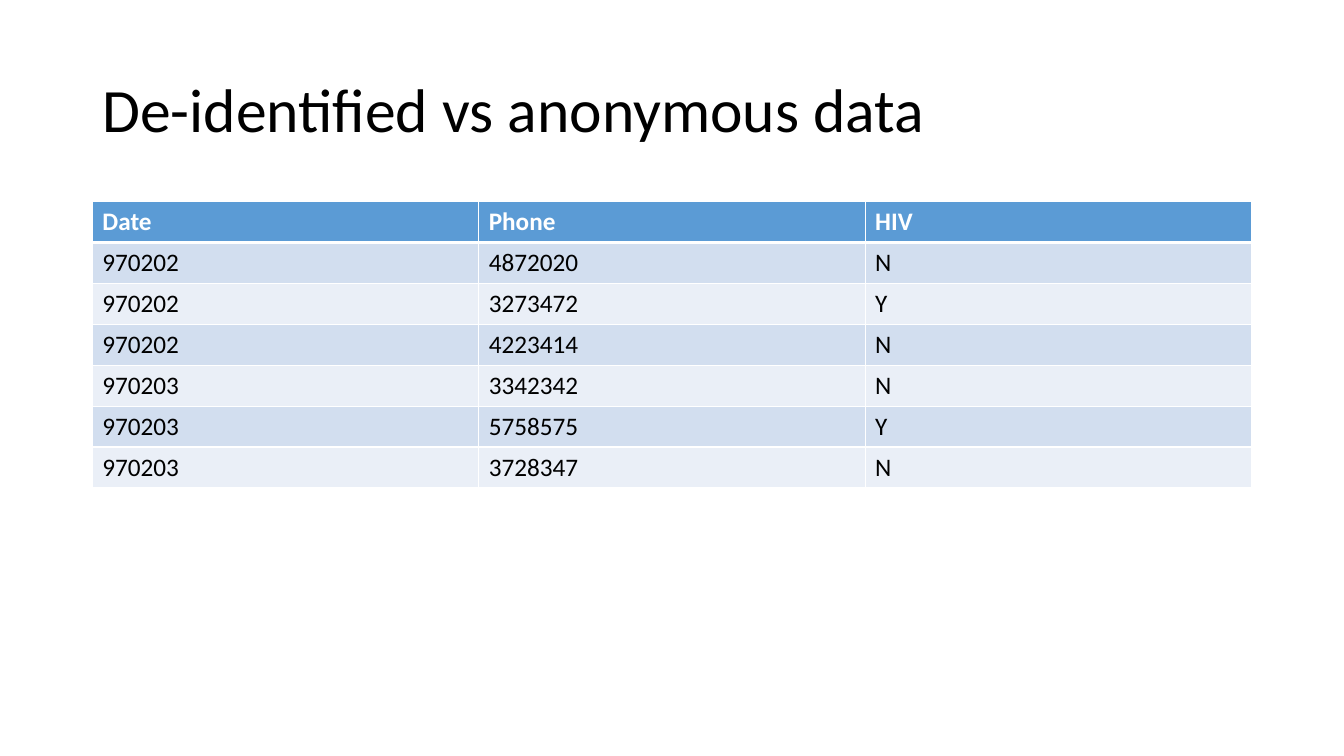
from lxml.etree import SubElement as Sub
from pptx import Presentation
from pptx.dml.color import RGBColor as Rgb
from pptx.enum.text import MSO_ANCHOR as Anchor
from pptx.oxml.ns import qn
from pptx.util import Emu, Pt

PX = 9525
FONT = "Calibri"
HEX = {
    "black": "000000",
    "white": "FFFFFF",
    "head": "5B9BD5",
    "dark": "D2DEEF",
    "light": "EAEFF7",
}
ROWS = [
    ("Date", "Phone", "HIV"),
    ("970202", "4872020", "N"),
    ("970202", "3273472", "Y"),
    ("970202", "4223414", "N"),
    ("970203", "3342342", "N"),
    ("970203", "5758575", "Y"),
    ("970203", "3728347", "N"),
]


def px(num):
    return Emu(num * PX)


def write(frame, text, size=18, color="black", bold=False, space=None):
    para = frame.paragraphs[0]
    para.line_spacing = space
    run = para.add_run()
    run.text = text
    font = run.font
    font.name = FONT
    font.size = Pt(size)
    font.bold = bold
    font.color.rgb = Rgb.from_string(HEX[color])


def add_title(slide, text, left, top, width, height):
    box = slide.shapes.add_textbox(px(left), px(top), px(width), px(height))
    frame = box.text_frame
    frame.word_wrap = True
    frame.vertical_anchor = Anchor.MIDDLE
    write(frame, text, size=44, space=0.9)


def add_edges(cell, **widths):
    props = cell._tc.get_or_add_tcPr()
    for side in "LRTB":
        line = Sub(props, qn(f"a:ln{side}"), w=str(Pt(widths.get(side, 1))))
        fill = Sub(line, qn("a:solidFill"))
        Sub(fill, qn("a:srgbClr"), val=HEX["white"])


def fill_cell(cell, text, row):
    head = row == 0
    if head:
        add_edges(cell, B=3)
    elif row == 1:
        add_edges(cell, T=3)
    else:
        add_edges(cell)
    tone = "head" if head else "dark" if row % 2 else "light"
    cell.fill.solid()
    cell.fill.fore_color.rgb = Rgb.from_string(HEX[tone])
    write(cell.text_frame, text, color="white" if head else "black", bold=head)


def add_grid(slide, rows, left, top, width, pitch):
    count = len(rows)
    frame = slide.shapes.add_table(
        count, len(rows[0]), px(left), px(top), px(width), px(pitch * count)
    )
    table = frame.table
    for row, texts in enumerate(rows):
        table.rows[row].height = px(pitch)
        for col, text in enumerate(texts):
            fill_cell(table.cell(row, col), text, row)


def main():
    deck = Presentation()
    deck.slide_width, deck.slide_height = px(1280), px(720)
    slide = deck.slides.add_slide(deck.slide_layouts[6])
    add_title(slide, "De-identified vs anonymous data", 88, 38, 1104, 139)
    add_grid(slide, ROWS, 88, 192, 1104, 39)
    deck.save("out.pptx")


if __name__ == "__main__":
    main()
